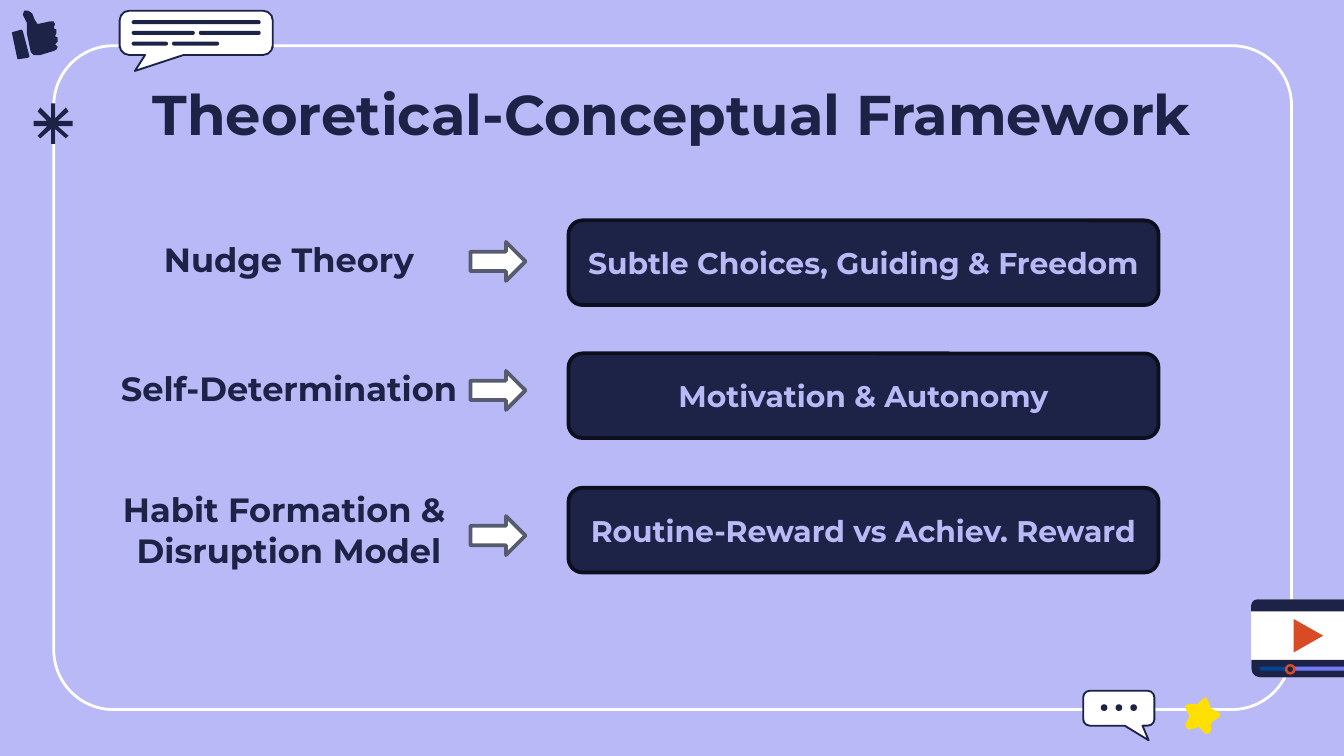
from pptx import Presentation
from pptx.dml.color import RGBColor
from pptx.enum.shapes import MSO_SHAPE as Preset
from pptx.enum.text import MSO_ANCHOR as Anchor, PP_ALIGN as Align
from pptx.util import Inches, Pt

COLORS = {
    "lilac": "B9B9F7", "navy": "1D2346", "edge": "0D0F1F", "gray": "575B6F",
    "white": "FFFFFF", "red": "D84B25", "blue": "004593", "violet": "7878F1",
    "yellow": "FFE002",
}


def paint(shape, fill=None, line=None, width=1):
    shape.shadow.inherit = False
    if fill:
        shape.fill.solid()
        shape.fill.fore_color.rgb = RGBColor.from_string(COLORS[fill])
    else:
        shape.fill.background()
    if line:
        shape.line.color.rgb = RGBColor.from_string(COLORS[line])
        shape.line.width = Pt(width)
    else:
        shape.line.fill.background()


def write(shape, lines, size, color, anchor, inset_y):
    frame = shape.text_frame
    layout = {"word_wrap": True, "vertical_anchor": anchor,
              "margin_left": Inches(0.1), "margin_right": Inches(0.1),
              "margin_top": Inches(inset_y), "margin_bottom": Inches(inset_y)}
    for name, value in layout.items():
        setattr(frame, name, value)
    for index, line in enumerate(lines):
        paragraph = frame.add_paragraph() if index else frame.paragraphs[0]
        paragraph.alignment = Align.CENTER
        run = paragraph.add_run()
        run.text = line
        for name, value in {"name": "Montserrat", "size": Pt(size), "bold": True}.items():
            setattr(run.font, name, value)
        run.font.color.rgb = RGBColor.from_string(COLORS[color])


presentation = Presentation()
presentation.slide_width = Inches(10)
presentation.slide_height = Inches(10) * 9 // 16
slide = presentation.slides.add_slide(presentation.slide_layouts[6])
slide.background.fill.solid()
slide.background.fill.fore_color.rgb = RGBColor.from_string(COLORS["lilac"])
shapes = slide.shapes

decorations = [
    (Preset.ROUNDED_RECTANGLE, (0.4, 0.34, 9.21, 4.94), [0.09], 0, (None, "white", 1.5)),
    (Preset.ROUNDED_RECTANGLE, (9.31, 4.46, 0.83, 0.58), [0.11], 0, ("white",)),
    (Preset.ROUND_2_SAME_RECTANGLE, (9.31, 4.46, 0.83, 0.09), [0.5, 0], 0, ("navy",)),
    (Preset.ROUND_2_SAME_RECTANGLE, (9.31, 4.91, 0.83, 0.13), [0.5, 0], 180, ("navy",)),
    (Preset.ISOSCELES_TRIANGLE, (9.61, 4.62, 0.25, 0.22), [0.5], 90, ("red",)),
    (Preset.ROUNDED_RECTANGLE, (9.37, 4.96, 0.72, 0.03), [0.5], 0, ("blue",)),
    (Preset.ROUNDED_RECTANGLE, (9.6, 4.96, 0.49, 0.03), [0.5], 0, ("violet",)),
    (Preset.OVAL, (9.56, 4.94, 0.08, 0.08), [], 0, ("red",)),
    (Preset.OVAL, (9.58, 4.96, 0.04, 0.04), [], 0, ("navy",)),
    (Preset.ROUNDED_RECTANGULAR_CALLOUT, (0.89, 0.08, 1.14, 0.33),
     [-0.4, 0.86, 0.22], 0, ("white", "navy", 1)),
    (Preset.ROUNDED_RECTANGULAR_CALLOUT, (8.06, 5.14, 0.53, 0.26),
     [0.42, 0.92, 0.19], 0, ("white", "navy", 1)),
]
for left, top, width in [(0.98, 0.15, 0.96), (0.98, 0.23, 0.47), (1.48, 0.23, 0.46),
                         (0.98, 0.31, 0.27), (1.28, 0.31, 0.35)]:
    decorations.append((Preset.ROUNDED_RECTANGLE, (left, top, width, 0.03), [0.5], 0, ("navy",)))
for dot in range(3):
    decorations.append((Preset.OVAL, (8.19 + 0.11 * dot, 5.24, 0.05, 0.05), [], 0, ("navy",)))

for preset, box, adjustments, rotation, style in decorations:
    shape = shapes.add_shape(preset, *map(Inches, box))
    for index, value in enumerate(adjustments):
        shape.adjustments[index] = value
    shape.rotation = rotation
    paint(shape, *style)

star = [(898, 519), (901, 527), (907, 530), (908, 532), (907, 534), (902, 537),
        (901, 539), (901, 544), (899, 546), (897, 546), (892, 541), (885, 543),
        (883, 542), (882, 539), (885, 533), (882, 527), (882, 525), (884, 524),
        (891, 524), (895, 520)]
cuff = [(9, 24), (16, 22), (17, 23), (22, 42), (21, 43), (14, 44), (13, 44), (9, 25)]
thumb = [(18, 8), (21, 8), (24, 10), (26, 15), (28, 18), (37, 16), (40, 16), (41, 18),
         (40, 21), (42, 22), (42, 25), (41, 27), (43, 28), (43, 31), (41, 33), (43, 35),
         (42, 37), (40, 38), (30, 41), (25, 41), (23, 39), (20, 25), (20, 17), (17, 11)]
asterisk = [(54, 90), (43, 90), (51, 83), (49, 80), (41, 88), (41, 77), (38, 77), (38, 88),
            (30, 80), (28, 83), (35, 90), (25, 90), (25, 94), (35, 94), (28, 101), (30, 103),
            (38, 96), (38, 107), (41, 107), (41, 96), (49, 103), (51, 101), (43, 94), (54, 94)]
for points, color in [(star, "yellow"), (cuff, "navy"), (thumb, "navy"), (asterisk, "navy")]:
    builder = shapes.build_freeform(*points[0], scale=Inches(0.01))
    builder.add_line_segments(points[1:], close=True)
    paint(builder.convert_to_shape(), color)

title = shapes.add_textbox(*map(Inches, (0.79, 0.49, 8.42, 0.63)))
write(title, ["Theoretical-Conceptual Framework"], 30, "navy", Anchor.TOP, 0.1)

rows = [
    (["Nudge Theory"], 1.71, 0.47, 1.8, 1.64, "Subtle Choices, Guiding & Freedom"),
    (["Self-Determination"], 2.67, 0.47, 2.76, 2.63, "Motivation & Autonomy"),
    (["Habit Formation & ", "Disruption Model"], 3.63, 0.71, 3.84, 3.63,
     "Routine-Reward vs Achiev. Reward"),
]
for theory, top, height, arrow_top, card_top, concept in rows:
    label = shapes.add_textbox(*map(Inches, (0.79, top, 2.72, height)))
    write(label, theory, 18, "navy", Anchor.BOTTOM, 0.1)
    arrow = shapes.add_shape(Preset.RIGHT_ARROW, *map(Inches, (3.5, arrow_top, 0.41, 0.29)))
    paint(arrow, "white", "gray", 2)
    card = shapes.add_shape(Preset.ROUNDED_RECTANGLE, *map(Inches, (4.23, card_top, 4.39, 0.63)))
    paint(card, "navy", "edge", 2)
    write(card, [concept], 16, "lilac", Anchor.MIDDLE, 0.05)

presentation.save("out.pptx")
